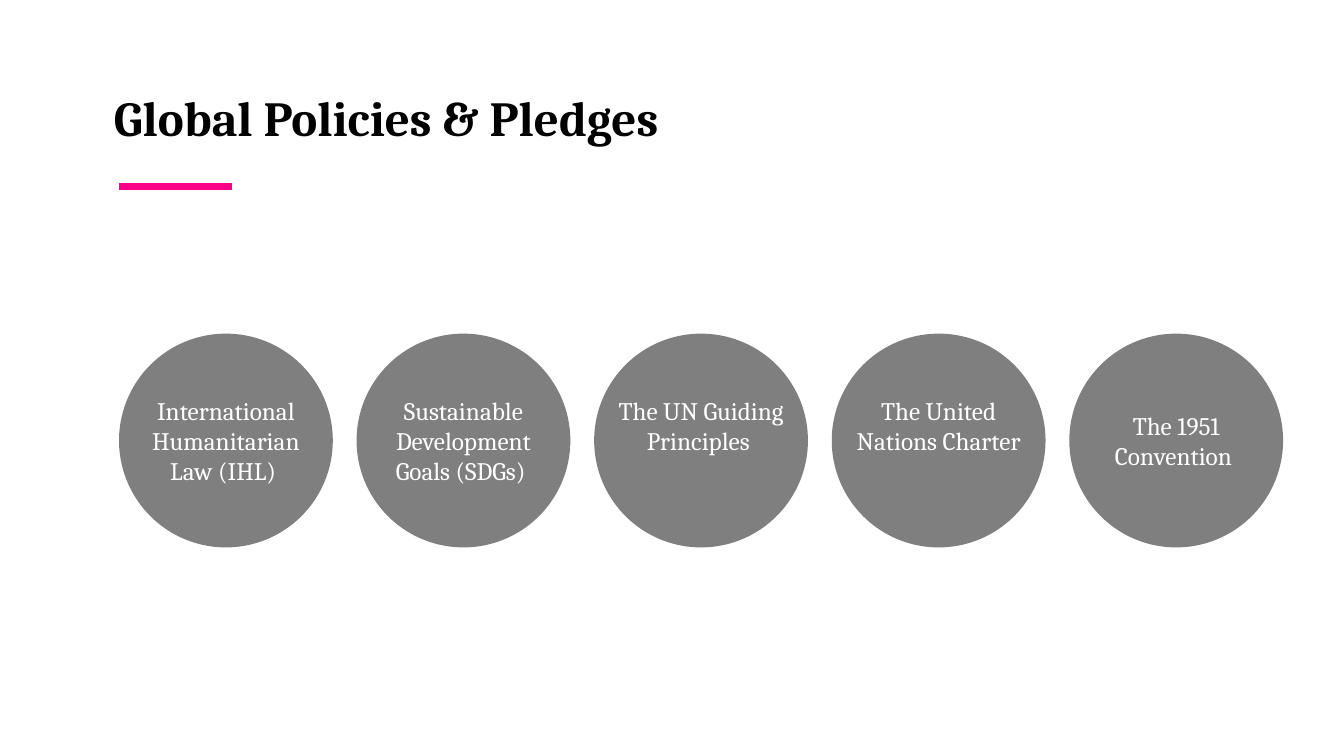
"""Build the slide on global policies and pledges."""
from dataclasses import dataclass

from lxml import etree
from pptx import Presentation
from pptx.dml.color import RGBColor
from pptx.enum.shapes import MSO_CONNECTOR, MSO_SHAPE
from pptx.enum.text import MSO_ANCHOR, MSO_AUTO_SIZE, PP_ALIGN
from pptx.oxml.ns import qn
from pptx.slide import Slide
from pptx.util import Pt

OVAL = MSO_SHAPE.OVAL
LINE = MSO_CONNECTOR.STRAIGHT
TOP = MSO_ANCHOR.TOP
GROW = MSO_AUTO_SIZE.SHAPE_TO_FIT_TEXT
LEFT, CENTER = PP_ALIGN.LEFT, PP_ALIGN.CENTER

COLORS = {"ink": "000000", "pink": "FF008A", "gray": "7F7F7F", "white": "FFFFFF"}
FONT = "Cambria"
START, STEP, SIZE, ROW = 85, 169.7, 152.7, 238.3


@dataclass(frozen=True)
class Pledge:
    """Label of one circle, with the place of its text."""
    text: str
    width: float = SIZE
    top: float = 278.6
    height: float = 72.7


PLEDGES = [
    Pledge("International Humanitarian Law (IHL) "),
    Pledge("Sustainable Development Goals (SDGs) "),
    Pledge("The UN Guiding Principles ", width=139),
    Pledge("The United Nations Charter", width=140.4),
    Pledge("The 1951 Convention ", top=289.4, height=51),
]


def color(name: str) -> RGBColor:
    """Return a named colour."""
    return RGBColor.from_string(COLORS[name])


def write(shape, text: str, *, size: float, ink: str, align=CENTER, bold: bool = False) -> None:
    """Put formatted text into a shape."""
    frame = shape.text_frame
    frame.word_wrap = True
    frame.auto_size = GROW
    frame.vertical_anchor = TOP
    para = frame.paragraphs[0]
    para.alignment = align
    run = para.add_run()
    run.text = text
    run.font.name = FONT
    run.font.size = Pt(size)
    run.font.bold = bold
    run.font.color.rgb = color(ink)


def add_title(slide: Slide) -> None:
    """Place the title and the rule below it."""
    title = slide.shapes.title
    title.left, title.top = Pt(74.2), Pt(59)
    title.width, title.height = Pt(480.2), Pt(49.7)
    write(title, "Global Policies & Pledges", size=35, ink="ink", align=LEFT, bold=True)
    rule = slide.shapes.add_connector(LINE, Pt(START), Pt(133.2), Pt(165.6), Pt(133.2))
    rule.line.color.rgb = color("pink")
    rule.line.width = Pt(4.5)
    etree.SubElement(rule.element.spPr, qn("a:effectLst"))


def add_pledge(slide: Slide, pledge: Pledge, left: float) -> None:
    """Draw one circle and its centred label."""
    disc = slide.shapes.add_shape(OVAL, Pt(left), Pt(ROW), Pt(SIZE), Pt(SIZE))
    disc.shadow.inherit = False
    disc.fill.solid()
    disc.fill.fore_color.rgb = color("gray")
    disc.line.fill.background()
    inset = (SIZE - pledge.width) / 2
    label = slide.shapes.add_textbox(
        Pt(left + inset), Pt(pledge.top), Pt(pledge.width), Pt(pledge.height))
    write(label, pledge.text, size=18, ink="white")


def main() -> None:
    """Build and save the slide."""
    deck = Presentation()
    deck.slide_width, deck.slide_height = Pt(960), Pt(540)
    slide = deck.slides.add_slide(deck.slide_layouts[5])
    add_title(slide)
    for index, pledge in enumerate(PLEDGES):
        add_pledge(slide, pledge, START + index * STEP)
    deck.save("out.pptx")


if __name__ == "__main__":
    main()
